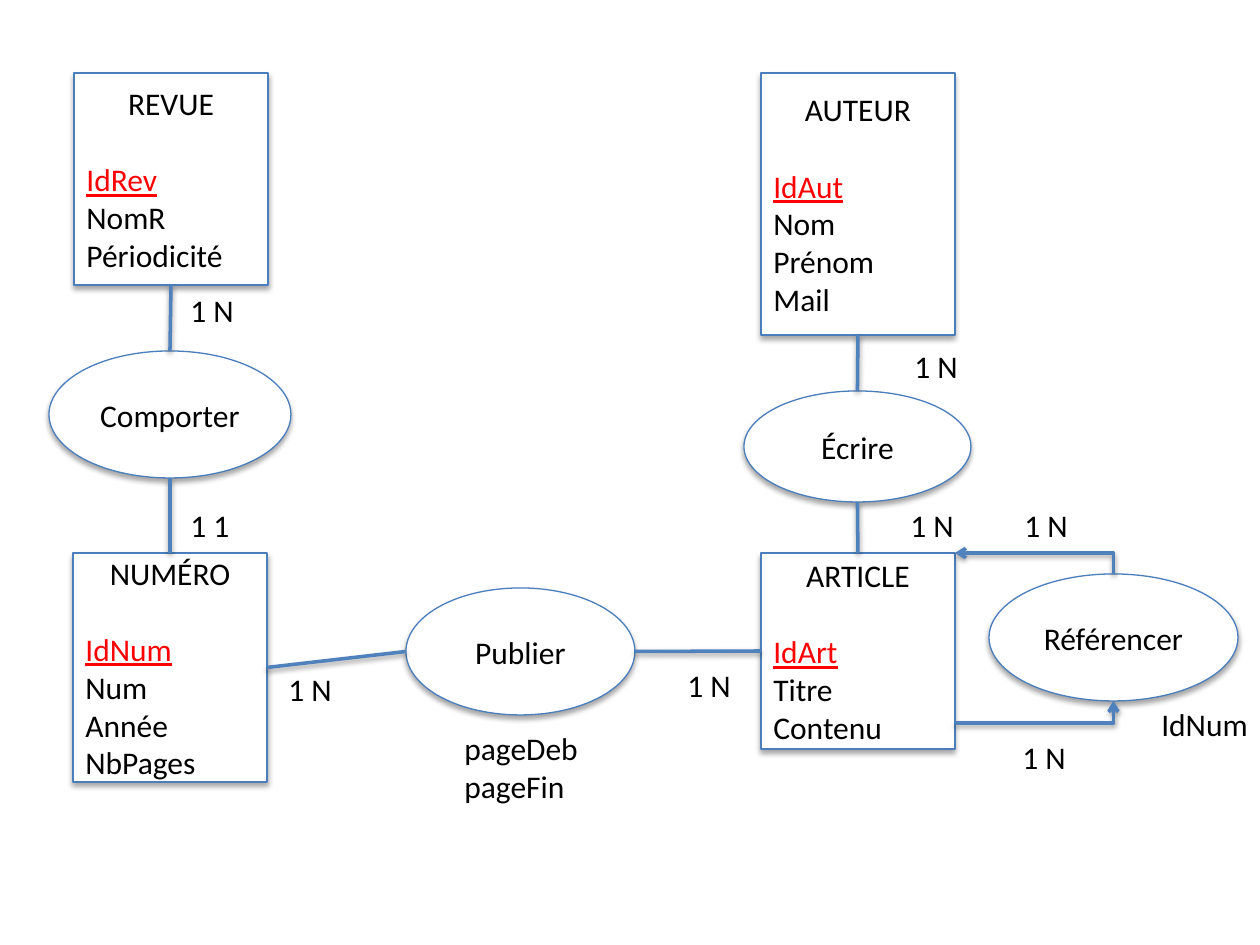
"""Entity-relationship diagram of journals, issues, articles and authors."""
from lxml import etree
from pptx import Presentation
from pptx.dml.color import RGBColor
from pptx.enum.shapes import MSO_CONNECTOR, MSO_SHAPE
from pptx.enum.text import MSO_ANCHOR, MSO_AUTO_SIZE, PP_ALIGN
from pptx.oxml.ns import qn
from pptx.util import Emu, Pt

RECT, OVAL = MSO_SHAPE.RECTANGLE, MSO_SHAPE.OVAL
STRAIGHT, ELBOW = MSO_CONNECTOR.STRAIGHT, MSO_CONNECTOR.ELBOW
LEFT, CENTER = PP_ALIGN.LEFT, PP_ALIGN.CENTER
PX = 914400 // 126

THEME = {
    "font": "Calibri", "size": Pt(18), "title_gap": Pt(22),
    "text": RGBColor(0, 0, 0), "key": RGBColor(255, 0, 0),
    "fill": RGBColor(255, 255, 255),
    "outline": RGBColor(0x4B, 0x7E, 0xBC), "outline_width": Pt(0.75),
    "link": RGBColor(0x4F, 0x81, 0xBD), "link_width": Pt(2),
    "shape_shadow": {"blur": 3.1, "dist": 1.8, "alpha": 35},
    "link_shadow": {"blur": 3.1, "dist": 1.6, "alpha": 38},
}

ENTITIES = {
    "REVUE": ((74, 73, 194, 212), ["IdRev", "NomR", "Périodicité"]),
    "NUMÉRO": ((73, 553, 194, 229), ["IdNum", "Num", "Année", "NbPages"]),
    "ARTICLE": ((761, 553, 194, 196), ["IdArt", "Titre", "Contenu"]),
    "AUTEUR": ((761, 73, 194, 262), ["IdAut", "Nom", "Prénom", "Mail"]),
}
RELATIONS = {
    "Publier": (406, 588, 229, 127),
    "Comporter": (49, 351, 242, 127),
    "Écrire": (744, 391, 227, 111),
    "Référencer": (989, 574, 249, 127),
}
LINKS = [
    ("Comporter", "top", "REVUE", "bottom"),
    ("NUMÉRO", "top", "Comporter", "bottom"),
    ("Publier", "left", "NUMÉRO", "right"),
    ("ARTICLE", "left", "Publier", "right"),
    ("Écrire", "top", "AUTEUR", "bottom"),
    ("ARTICLE", "top", "Écrire", "bottom"),
]
ARROWS = [
    ((955, 723), ("Référencer", "bottom"), "tailEnd"),
    ((955, 553), ("Référencer", "top"), "headEnd"),
]
LABELS = [
    ((452, 723, 140, 89), ["pageDeb", "pageFin"]),
    ((178, 285, 69, 50), ["1 N"]),
    ((178, 500, 64, 50), ["1 1"]),
    ((276, 664, 69, 50), ["1 N"]),
    ((675, 660, 69, 50), ["1 N"]),
    ((1012, 500, 69, 50), ["1 N"]),
    ((1010, 732, 69, 50), ["1 N"]),
    ((902, 341, 69, 50), ["1 N"]),
    ((898, 500, 69, 50), ["1 N"]),
    ((1149, 699, 113, 50), ["IdNum"]),
]
SIDES = {"top": (0.5, 0), "bottom": (0.5, 1), "left": (0, 0.5), "right": (1, 0.5)}
BOXES = {**{name: box for name, (box, _) in ENTITIES.items()}, **RELATIONS}


def emu(values):
    return [Emu(round(v * PX)) for v in values]


def site(name, side):
    x, y, w, h = BOXES[name]
    fx, fy = SIDES[side]
    return x + w * fx, y + h * fy


def add_shadow(sp, blur, dist, alpha):
    spPr = sp._element.spPr
    for old in spPr.findall(qn("a:effectLst")):
        spPr.remove(old)
    effects = etree.SubElement(spPr, qn("a:effectLst"))
    shadow = etree.SubElement(effects, qn("a:outerShdw"), blurRad=str(Pt(blur)),
                              dist=str(Pt(dist)), dir="5400000", rotWithShape="0")
    color = etree.SubElement(shadow, qn("a:srgbClr"), val="000000")
    etree.SubElement(color, qn("a:alpha"), val=str(alpha * 1000))


def add_lines(tf, lines):
    for i, (text, fmt) in enumerate(lines):
        p = tf.paragraphs[0] if i == 0 else tf.add_paragraph()
        p.alignment = fmt.get("align", LEFT)
        if "gap" in fmt:
            p.space_after = fmt["gap"]
        r = p.add_run()
        r.text = text
        font = {"name": THEME["font"], "size": THEME["size"],
                "underline": fmt.get("underline")}
        for name, value in font.items():
            setattr(r.font, name, value)
        r.font.color.rgb = fmt.get("color", THEME["text"])


def add_node(s, kind, box, lines):
    sp = s.shapes.add_shape(kind, *emu(box))
    sp.fill.solid()
    sp.fill.fore_color.rgb = THEME["fill"]
    sp.line.color.rgb = THEME["outline"]
    sp.line.width = THEME["outline_width"]
    add_shadow(sp, **THEME["shape_shadow"])
    sp.text_frame.word_wrap = True
    sp.text_frame.vertical_anchor = MSO_ANCHOR.MIDDLE
    add_lines(sp.text_frame, lines)


def add_link(s, kind, start, end):
    link = s.shapes.add_connector(kind, *emu((*start, *end)))
    link.line.color.rgb = THEME["link"]
    link.line.width = THEME["link_width"]
    add_shadow(link, **THEME["link_shadow"])
    return link


def add_arrow(s, start, end, arrow_end):
    link = add_link(s, ELBOW, start, end)
    link._element.spPr.find(qn("a:prstGeom")).set("prst", "bentConnector2")
    ln = link.line._get_or_add_ln()
    etree.SubElement(ln, qn(f"a:{arrow_end}"), type="arrow")


def add_label(s, box, lines):
    tf = s.shapes.add_textbox(*emu(box)).text_frame
    tf.word_wrap = False
    tf.auto_size = MSO_AUTO_SIZE.SHAPE_TO_FIT_TEXT
    add_lines(tf, [(line, {}) for line in lines])


def main():
    prs = Presentation()
    prs.slide_width, prs.slide_height = emu((1260, 945))
    s = prs.slides.add_slide(prs.slide_layouts[6])
    title = {"align": CENTER, "gap": THEME["title_gap"]}
    key = {"color": THEME["key"], "underline": True}
    for name, (box, (identifier, *fields)) in ENTITIES.items():
        add_node(s, RECT, box, [(name, title), (identifier, key),
                                *((field, {}) for field in fields)])
    for name, box in RELATIONS.items():
        add_node(s, OVAL, box, [(name, {"align": CENTER})])
    for source, source_side, target, target_side in LINKS:
        add_link(s, STRAIGHT, site(source, source_side), site(target, target_side))
    for start, end, arrow_end in ARROWS:
        add_arrow(s, start, site(*end), arrow_end)
    for box, lines in LABELS:
        add_label(s, box, lines)
    prs.save("out.pptx")


if __name__ == "__main__":
    main()
